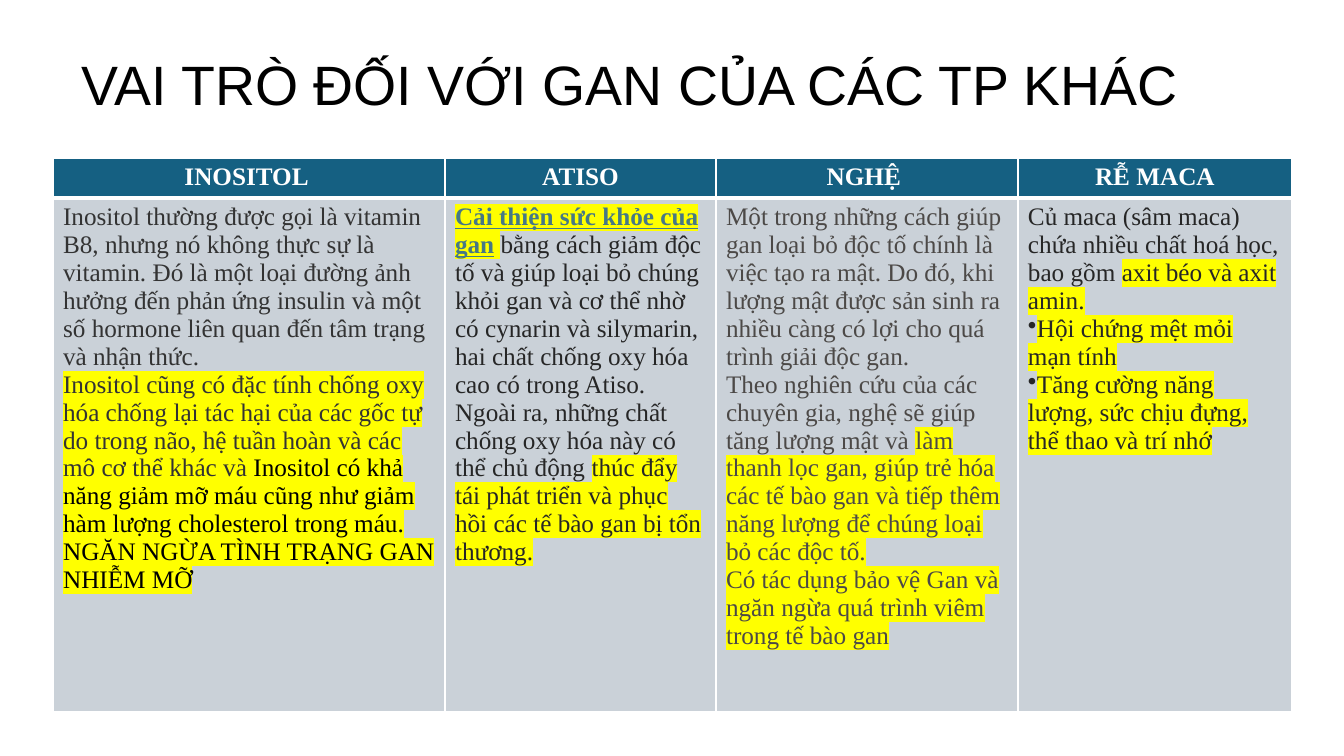
import pptx
import pptx.dml.color
import pptx.enum.text
import pptx.oxml
import pptx.oxml.ns
import pptx.util
import lxml.etree

# Content: each column has a width in px, a heading and paragraphs of
# (text, colour, style) runs; "mark" highlights and "link" also underlines.
TITLE = "VAI TRÒ ĐỐI VỚI GAN CỦA CÁC TP KHÁC"
COLUMNS = [
    (392, "INOSITOL ", [
        [("Inositol thường được gọi là vitamin B8, nhưng nó không thực sự là vitamin. "
          "Đó là một loại đường ảnh hưởng đến phản ứng insulin và một số hormone liên quan "
          "đến tâm trạng và nhận thức.", "slate", "plain")],
        [("Inositol cũng có đặc tính chống oxy hóa chống lại tác hại của các gốc tự do "
          "trong não, hệ tuần hoàn và các mô cơ thể khác và ", "slate", "mark"),
         ("Inositol có khả năng giảm mỡ máu cũng như giảm hàm lượng cholesterol trong máu.",
          "black", "mark")],
        [("NGĂN NGỪA TÌNH TRẠNG GAN NHIỄM MỠ", "black", "mark")],
    ]),
    (271, "ATISO", [
        [("Cải thiện sức khỏe của gan", "link", "link"),
         (" ", "black", "mark"),
         ("bằng cách giảm độc tố và giúp loại bỏ chúng khỏi gan và cơ thể nhờ có cynarin "
          "và silymarin, hai chất chống oxy hóa cao có trong Atiso.", "ink", "plain")],
        [("Ngoài ra, những chất chống oxy hóa này có thể chủ động ", "ink", "plain"),
         ("thúc đẩy tái phát triển và phục hồi các tế bào gan bị tổn thương.",
          "ink", "mark")],
    ]),
    (302, "NGHỆ ", [
        [("Một trong những cách giúp gan loại bỏ độc tố chính là việc tạo ra mật. Do đó, "
          "khi lượng mật được sản sinh ra nhiều càng có lợi cho quá trình giải độc gan.",
          "brown", "plain")],
        [("Theo nghiên cứu của các chuyên gia, nghệ sẽ giúp tăng lượng mật và ",
          "brown", "plain"),
         ("làm thanh lọc gan, giúp trẻ hóa các tế bào gan và tiếp thêm năng lượng để chúng "
          "loại bỏ các độc tố.", "brown", "mark")],
        [("Có tác dụng bảo vệ Gan và ngăn ngừa quá trình viêm trong tế bào gan",
          "brown", "mark")],
    ]),
    (274, "RỄ MACA", [
        [("Củ maca (sâm maca) chứa nhiều chất hoá học, bao gồm ", "ink", "plain"),
         ("axit béo và axit amin.", "ink", "mark")],
        [("Hội chứng mệt mỏi mạn tính", "ink", "mark")],
        [("Tăng cường năng lượng, sức chịu đựng, thể thao và trí nhớ", "ink", "mark")],
    ]),
]
BULLETED = {("RỄ MACA", 1), ("RỄ MACA", 2)}

THEME = {
    "title_font": "Arial", "title_size": 39.6,
    "table_font": "Times New Roman", "table_size": 18,
    "black": "000000", "white": "FFFFFF", "slate": "333333", "ink": "262626",
    "brown": "4C4947", "link": "467886", "mark": "FFFF00",
    "header": "156082", "body": "CAD1D8",
}

# Layout in px
PX = 914400 / 100.8
SLIDE = (1344, 756)
TITLE_BOX = (72, 49, 1132, 78)
TABLE_LEFT, TABLE_TOP = 53, 158
HEADER_HEIGHT, BODY_HEIGHT = 38, 513
BULLET_INDENT = -12


def emu(px):
    return pptx.util.Emu(round(px * PX))


def rgb(name):
    return pptx.dml.color.RGBColor.from_string(THEME[name])


def color_xml(tag, name):
    return (f'<a:{tag} {pptx.oxml.ns.nsdecls("a")}>'
            f'<a:srgbClr val="{THEME[name]}"/></a:{tag}>')


def set_font(paragraph, kind, color):
    paragraph.font.name = THEME[kind + "_font"]
    paragraph.font.size = pptx.util.Pt(THEME[kind + "_size"])
    paragraph.font.color.rgb = rgb(color)


def add_run(paragraph, text, color, style):
    run = paragraph.add_run()
    run.text = text
    run.font.color.rgb = rgb(color)
    if style == "link":
        run.font.bold = run.font.underline = True
    if style != "plain":
        fill = run.font._element.find(pptx.oxml.ns.qn("a:solidFill"))
        fill.addnext(pptx.oxml.parse_xml(color_xml("highlight", "mark")))


def add_bullet(paragraph):
    props = paragraph._p.get_or_add_pPr()
    props.set("marL", "0")
    props.set("indent", str(emu(BULLET_INDENT)))
    bullet = lxml.etree.Element(pptx.oxml.ns.qn("a:buChar"), char="•")
    props.insert(0, pptx.oxml.parse_xml(color_xml("buClr", "ink")))
    props.insert(1, bullet)


def style_cell(cell, fill, top, bottom):
    cell.fill.solid()
    cell.fill.fore_color.rgb = rgb(fill)
    props = cell._tc.get_or_add_tcPr()
    for index, (side, points) in enumerate(
            [("lnL", 1), ("lnR", 1), ("lnT", top), ("lnB", bottom)]):
        line = lxml.etree.Element(pptx.oxml.ns.qn("a:" + side),
                                  w=str(pptx.util.Pt(points)))
        line.append(pptx.oxml.parse_xml(color_xml("solidFill", "white")))
        props.insert(index, line)


def add_title(slide):
    frame = slide.shapes.add_textbox(*map(emu, TITLE_BOX)).text_frame
    frame.word_wrap = True
    frame.vertical_anchor = pptx.enum.text.MSO_ANCHOR.MIDDLE
    heading = frame.paragraphs[0]
    heading.text = TITLE
    heading.line_spacing = 0.9
    set_font(heading, "title", "black")


def add_comparison(slide):
    total_width = sum(width for width, _, _ in COLUMNS)
    table = slide.shapes.add_table(
        2, len(COLUMNS), emu(TABLE_LEFT), emu(TABLE_TOP),
        emu(total_width), emu(HEADER_HEIGHT + BODY_HEIGHT)).table
    table.rows[0].height = emu(HEADER_HEIGHT)
    table.rows[1].height = emu(BODY_HEIGHT)

    for column, (width, name, paragraphs) in enumerate(COLUMNS):
        table.columns[column].width = emu(width)

        # Heading
        header = table.cell(0, column)
        style_cell(header, "header", 1, 3)
        heading = header.text_frame.paragraphs[0]
        heading.text = name
        heading.alignment = pptx.enum.text.PP_ALIGN.CENTER
        set_font(heading, "table", "white")
        heading.font.bold = True

        # Description
        body = table.cell(1, column)
        style_cell(body, "body", 3, 1)
        for number, runs in enumerate(paragraphs):
            frame = body.text_frame
            paragraph = frame.add_paragraph() if number else frame.paragraphs[0]
            set_font(paragraph, "table", runs[0][1])
            for run in runs:
                add_run(paragraph, *run)
            if (name, number) in BULLETED:
                add_bullet(paragraph)


def main():
    deck = pptx.Presentation()
    deck.slide_width, deck.slide_height = map(emu, SLIDE)
    slide = deck.slides.add_slide(deck.slide_layouts[6])
    add_title(slide)
    add_comparison(slide)
    deck.save("out.pptx")


if __name__ == "__main__":
    main()
